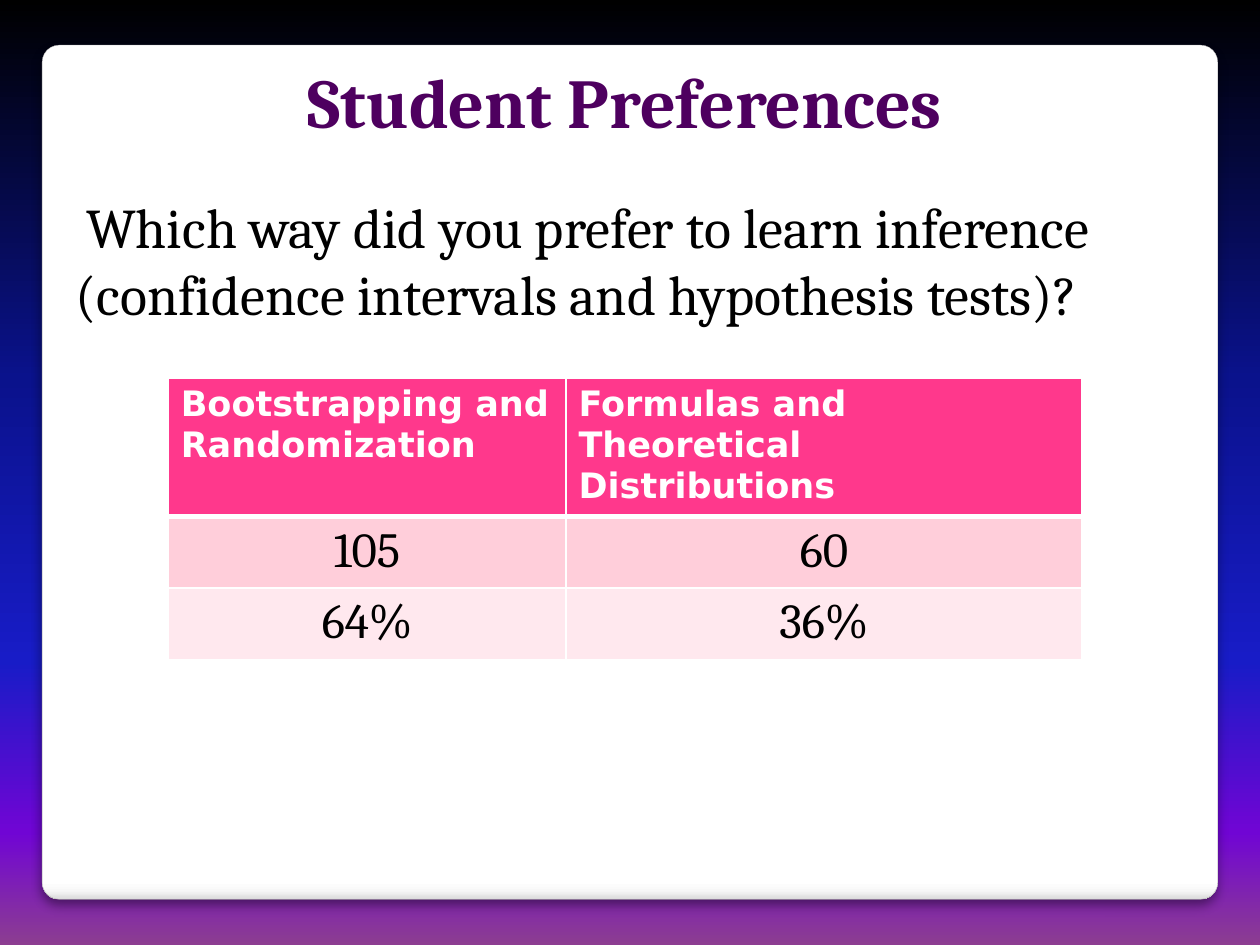
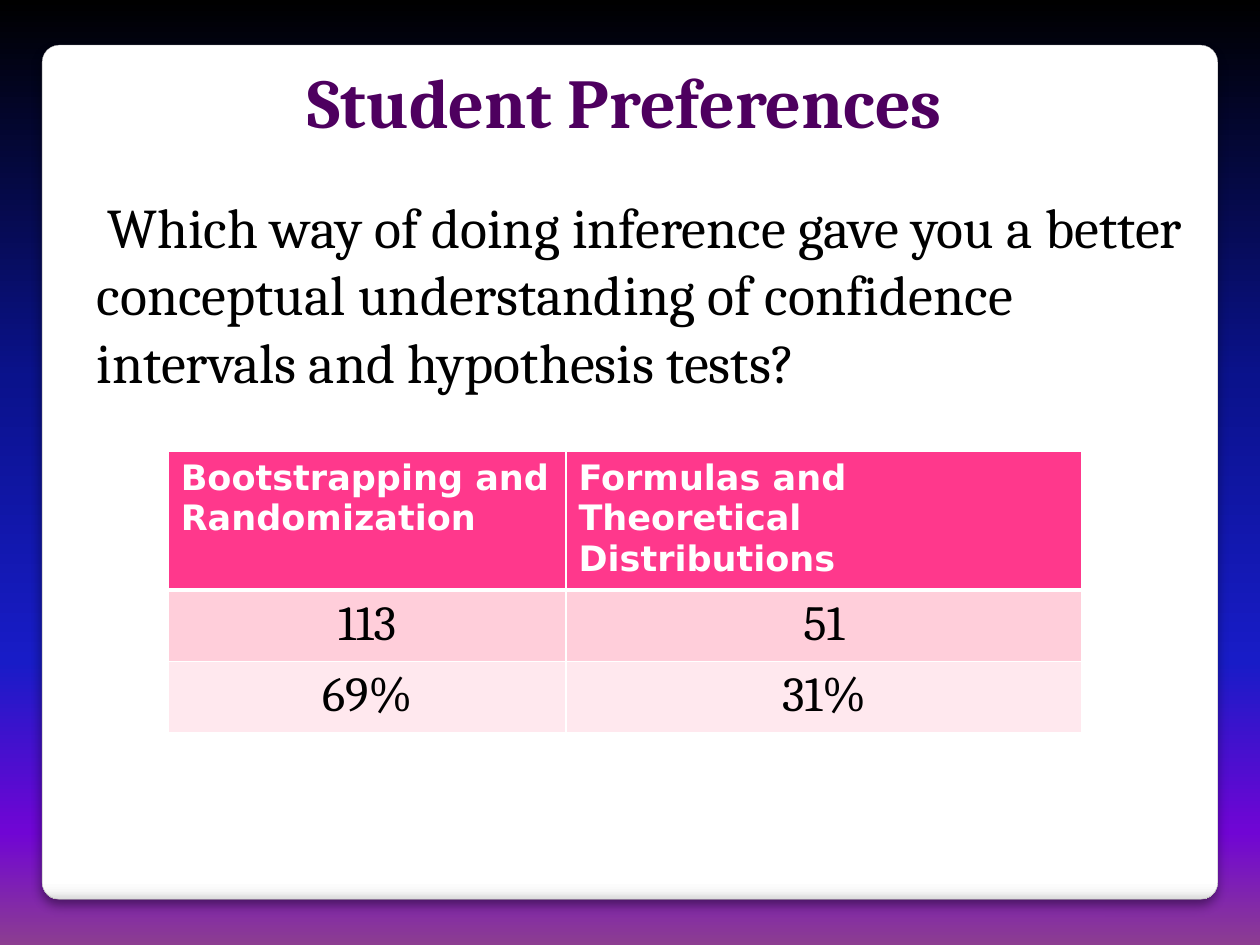
from lxml import etree
from pptx import Presentation
from pptx.dml.color import RGBColor
from pptx.enum.shapes import MSO_SHAPE
from pptx.enum.text import MSO_ANCHOR, MSO_AUTO_SIZE, PP_ALIGN
from pptx.oxml.ns import qn
from pptx.util import Cm, Pt

ROUNDED = MSO_SHAPE.ROUNDED_RECTANGLE
TOP = MSO_ANCHOR.TOP
FIXED = MSO_AUTO_SIZE.NONE
LEFT, CENTER = PP_ALIGN.LEFT, PP_ALIGN.CENTER

COLORS = {
    "title": "4E005F",
    "text": "000000",
    "white": "FFFFFF",
    "header": "FF388C",
    "count_row": "FFCEDA",
    "percent_row": "FFE8EE",
    "panel_edge": "A4A4A4",
}
BACKDROP = [(0, "000000"), (40, "0A128C"), (70, "181CC7"), (88, "7005D4"), (100, "8C3D91")]
PANEL = [(0, "FFFFFF"), (98, "FFFFFF"), (99, "F7F7F7"), (100, "DADADA")]
SERIF, SANS = "Cambria", "DejaVu Sans"

HEADINGS = ["Bootstrapping and Randomization", "Formulas and Theoretical Distributions"]
COLUMN_WIDTHS = [Cm(8.02), Cm(10.4)]
ROW_HEIGHT = Cm(1.04)  # least height; rows grow with their text
# Fill, font, size, bold, text colour, alignment, bottom border in points
ROW_STYLES = [
    ("header", SANS, 20, True, "white", LEFT, 3),
    ("count_row", SERIF, 28, False, "text", CENTER, 1),
    ("percent_row", SERIF, 28, False, "text", CENTER, 1),
]
QUESTIONS = [
    {
        "text": "Which way did you prefer to learn inference "
                "(confidence intervals and hypothesis tests)?",
        "left": Cm(1.27), "height": Cm(3.9), "table_top": Cm(7.62),
        "results": [["105", "60"], ["64%", "36%"]],
    },
    {
        "text": "Which way of doing inference gave you a better conceptual "
                "understanding of confidence intervals and hypothesis tests?",
        "left": Cm(1.7), "height": Cm(5.2), "table_top": Cm(9.1),
        "results": [["113", "51"], ["69%", "31%"]],
    },
]


def fill_downward(fill, owner, stops):
    """Give fill, found inside the XML element owner, a top-to-bottom gradient."""
    fill.gradient()
    fill.gradient_angle = 270
    stop_list = next(owner.iter(qn("a:gsLst")))
    for old_stop in list(stop_list):
        stop_list.remove(old_stop)
    for percent, color in stops:
        stop = etree.SubElement(stop_list, qn("a:gs"), pos=str(percent * 1000))
        etree.SubElement(stop, qn("a:srgbClr"), val=color)


def style_paragraph(para, name, size, color, bold=False, align=LEFT):
    para.alignment = align
    para.font.name = name
    para.font.size = Pt(size)
    para.font.bold = bold
    para.font.color.rgb = RGBColor.from_string(COLORS[color])


deck = Presentation()
deck.slide_width, deck.slide_height = Cm(25.4), Cm(19.05)
layout = deck.slide_layouts[5]
fill_downward(layout.background.fill, layout.element, BACKDROP)

for question in QUESTIONS:
    page = deck.slides.add_slide(layout)

    # White panel with a soft shadow, behind everything else
    panel = page.shapes.add_shape(ROUNDED, Cm(0.85), Cm(0.91), Cm(23.7), Cm(17.22))
    panel.adjustments[0] = 0.02
    fill_downward(panel.fill, panel.element, PANEL)
    panel.line.color.rgb = RGBColor.from_string(COLORS["panel_edge"])
    panel.line.width = Pt(0.16)
    panel.shadow.inherit = False
    effects = next(panel.element.iter(qn("a:effectLst")))
    shadow = etree.SubElement(effects, qn("a:outerShdw"), blurRad=str(Pt(6)),
                              dist=str(Pt(4)), dir="5400000", rotWithShape="0")
    shadow_color = etree.SubElement(shadow, qn("a:srgbClr"), val="000000")
    etree.SubElement(shadow_color, qn("a:alpha"), val="44000")

    title = page.shapes.title
    title.element.addprevious(panel.element)
    title.left, title.top, title.width, title.height = Cm(1.27), Cm(1.06), Cm(22.66), Cm(3.38)
    title.text = "Student Preferences"
    title.text_frame.vertical_anchor = TOP
    title.text_frame.auto_size = FIXED
    style_paragraph(title.text_frame.paragraphs[0], SERIF, 40, "title", True, CENTER)

    box = page.shapes.add_textbox(question["left"], Cm(3.76), Cm(22.66), question["height"])
    box.text_frame.word_wrap = True
    para = box.text_frame.paragraphs[0]
    para.space_after = Pt(18)
    style_paragraph(para, SERIF, 32, "text")
    for text, size in [(" ", 28), (question["text"], 32)]:
        span = para.add_run()
        span.text = text
        span.font.size = Pt(size)

    rows = [HEADINGS] + question["results"]
    table = page.shapes.add_table(
        len(rows), len(HEADINGS), Cm(3.39), question["table_top"],
        sum(COLUMN_WIDTHS), ROW_HEIGHT * len(rows)).table
    for column, width in zip(table.columns, COLUMN_WIDTHS):
        column.width = width
    above = 1
    for row, texts, style in zip(table.rows, rows, ROW_STYLES):
        fill, font, size, bold, color, align, below = style
        row.height = ROW_HEIGHT
        for cell, text in zip(row.cells, texts):
            cell.text = text
            style_paragraph(cell.text_frame.paragraphs[0], font, size, color, bold, align)
            cell.fill.solid()
            cell.fill.fore_color.rgb = RGBColor.from_string(COLORS[fill])
            properties = cell._tc.get_or_add_tcPr()
            borders = [("a:lnL", 1), ("a:lnR", 1), ("a:lnT", above), ("a:lnB", below)]
            for position, (tag, points) in enumerate(borders):
                border = etree.Element(qn(tag), w=str(Pt(points)))
                border_fill = etree.SubElement(border, qn("a:solidFill"))
                etree.SubElement(border_fill, qn("a:srgbClr"), val=COLORS["white"])
                properties.insert(position, border)
        above = below

deck.save("out.pptx")
